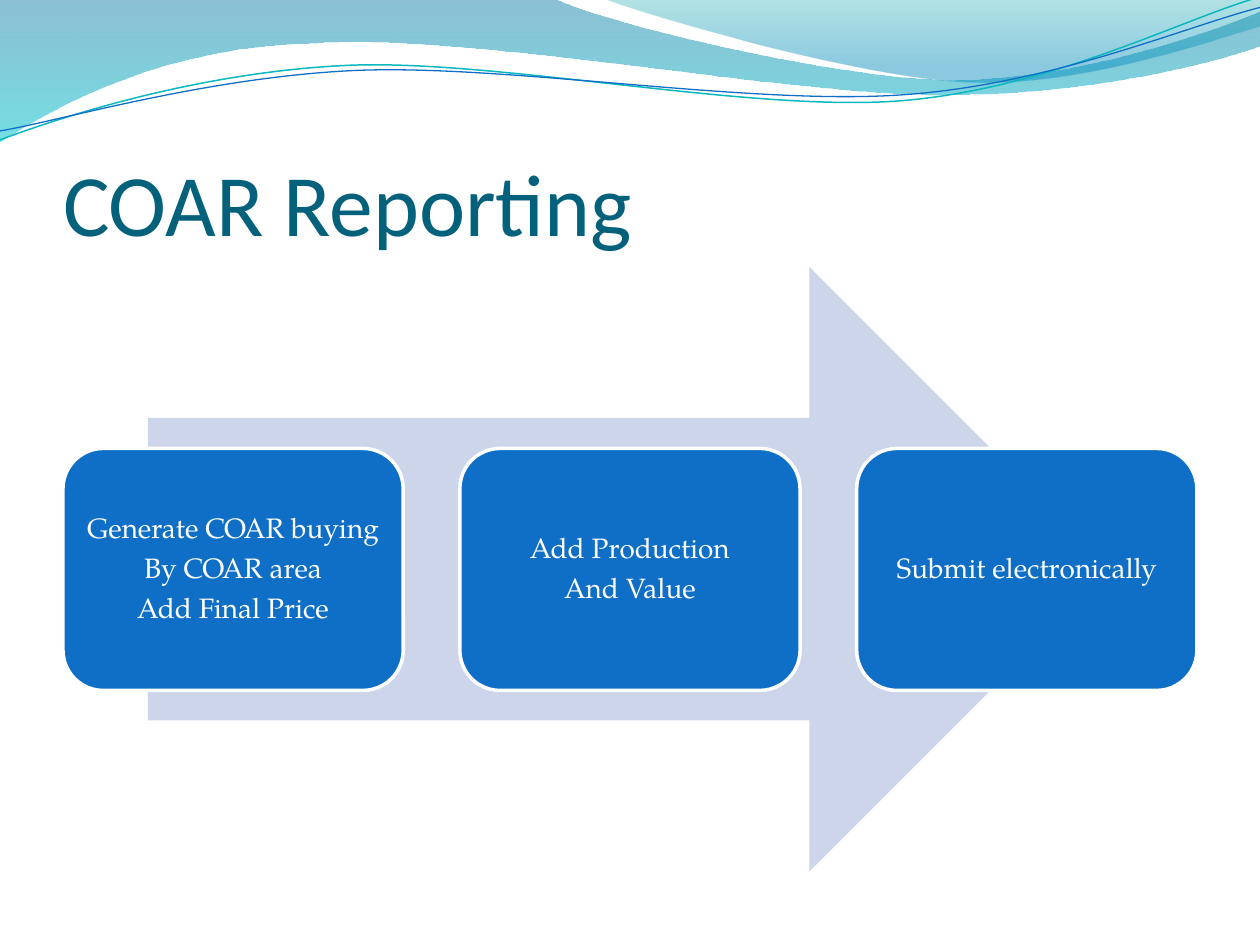
"""Build the COAR Reporting slide: a wave header and a three-step arrow process."""
from lxml.etree import SubElement
from pptx import Presentation
from pptx.dml.color import RGBColor
from pptx.enum.shapes import MSO_SHAPE as Kind
from pptx.enum.text import MSO_ANCHOR as Anchor, MSO_AUTO_SIZE as Fit, PP_ALIGN as Align
from pptx.oxml.ns import qn
from pptx.util import Cm, Pt

WHITE = RGBColor(0xFF, 0xFF, 0xFF)
BLUE = RGBColor(0x0F, 0x6F, 0xC6)
PALE = RGBColor(0xCC, 0xD5, 0xEA)
TEAL = RGBColor(0x0A, 0xB8, 0xBF)
DARK = RGBColor(0x04, 0x61, 0x7B)
DEEP = RGBColor(0x00, 0x74, 0xA1)
AQUA = RGBColor(0x00, 0xC6, 0xCF)
SEA = RGBColor(0x00, 0xA1, 0xA9)
SKY = RGBColor(0x00, 0x8B, 0xBF)


def style(item, form):
    for name, value in form.items():
        setattr(item, name, value)


def draw(start, parts, close):
    pen = slide.shapes.build_freeform(Cm(start[0]), Cm(start[1]))
    pen.add_line_segments([(Cm(part[-2]), Cm(part[-1])) for part in parts], close=close)
    shape = pen.convert_to_shape()
    shape.shadow.inherit = False
    for node, part in zip(list(shape.element.iter(qn("a:lnTo"))), parts):
        if len(part) == 6:
            node.clear()
            bend = node.makeelement(qn("a:cubicBezTo"))
            node.getparent().replace(node, bend)
            for x, y in zip(part[::2], part[1::2]):
                SubElement(bend, qn("a:pt"), x=str(Cm(x) - shape.left),
                           y=str(Cm(y) - shape.top))
    return shape


deck = Presentation()
style(deck, {"slide_width": Cm(25.4), "slide_height": Cm(19.05)})
slide = deck.slides.add_slide(deck.slide_layouts[5])

waves = [
    ((0, 0), [(11.18, -0.03), (12.09, 0.43, 16.87, 1.6, 19.25, 1.6),
              (21.67, 1.6, 24.33, 0.66, 25.4, 0.23), (25.43, 0.91),
              (24.97, 1.12, 22.1, 1.93, 18.95, 1.91),
              (15.8, 1.91, 9.7, 0.71, 6.53, 0.86),
              (3.28, 0.91, 1.17, 2.11, -0.03, 2.87)],
     [(0, DEEP, 45), (1, AQUA, 55)]),
    ((12.17, -0.03), [(12.93, 0.28, 17.32, 1.57, 19.53, 1.65),
                      (21.74, 1.75, 24.41, 0.81, 25.4, 0.53), (25.4, 0)],
     [(0, SEA, 30), (0.8, SKY, 45)]),
]
for start, parts, stops in waves:
    wave = draw(start, parts, True)
    wave.line.fill.background()
    wave.fill.gradient()
    wave.fill.gradient_angle = 270
    for stop, (place, color, _) in zip(wave.fill.gradient_stops, stops):
        stop.position = place
        stop.color.rgb = color
    for node, (_, _, alpha) in zip(wave.element.iter(qn("a:srgbClr")), stops):
        SubElement(node, qn("a:alpha"), val=str(alpha * 1000))

lines = [
    ((-0.05, 2.22), [(1.19, 1.82, 4.02, 1.04, 7.05, 1.05),
                     (10.05, 1.07, 15.02, 2.37, 18.08, 2.29),
                     (21.13, 2.2, 23.87, 0.91, 25.41, 0.55)], TEAL, 0.85),
    ((-0.04, 2.04), [(1.16, 1.9, 4.18, 1.15, 7.2, 1.16),
                     (10.25, 1.18, 15.13, 2.25, 18.18, 2.17),
                     (21.21, 2.1, 23.93, 1.06, 25.45, 0.75)], BLUE, 0.75),
]
for start, parts, color, width in lines:
    curve = draw(start, parts, False)
    curve.rotation = 357.3
    curve.fill.background()
    curve.line.color.rgb = color
    curve.line.width = Pt(width)

title = slide.shapes.title
style(title, {"left": Cm(1.27), "top": Cm(1.95), "width": Cm(22.86), "height": Cm(3.17)})
frame = title.text_frame
style(frame, {"text": "COAR Reporting", "vertical_anchor": Anchor.BOTTOM,
              "auto_size": Fit.NONE, "word_wrap": True, "margin_left": 0,
              "margin_right": 0, "margin_top": Cm(0.13), "margin_bottom": 0})
head = frame.paragraphs[0]
head.alignment = Align.LEFT
style(head.runs[0].font, {"name": "Calibri", "size": Pt(50)})
head.runs[0].font.color.rgb = DARK

arrow = slide.shapes.add_shape(Kind.RIGHT_ARROW, Cm(2.98), Cm(5.38), Cm(19.43), Cm(12.19))
arrow.shadow.inherit = False
arrow.fill.solid()
arrow.fill.fore_color.rgb = PALE
arrow.line.fill.background()

pad = Cm(0.18)
inner = {"word_wrap": True, "vertical_anchor": Anchor.MIDDLE, "margin_left": pad,
         "margin_right": pad, "margin_top": pad, "margin_bottom": pad}
row = {"alignment": Align.CENTER, "line_spacing": 0.9, "space_after": Pt(5.6)}
texts = ["Generate COAR buying \nBy COAR area\nAdd Final Price",
         "Add Production\nAnd Value", "Submit electronically"]
for n, text in enumerate(texts):
    box = slide.shapes.add_shape(Kind.ROUNDED_RECTANGLE, Cm(1.27 + 8 * n), Cm(9.04),
                                 Cm(6.86), Cm(4.88))
    box.shadow.inherit = False
    box.fill.solid()
    box.fill.fore_color.rgb = BLUE
    box.line.color.rgb = WHITE
    box.line.width = Pt(2)
    box.text_frame.text = text
    style(box.text_frame, inner)
    for para in box.text_frame.paragraphs:
        style(para, row)
        style(para.runs[0].font, {"name": "TeX Gyre Pagella", "size": Pt(16)})
        para.runs[0].font.color.rgb = WHITE

deck.save("out.pptx")
